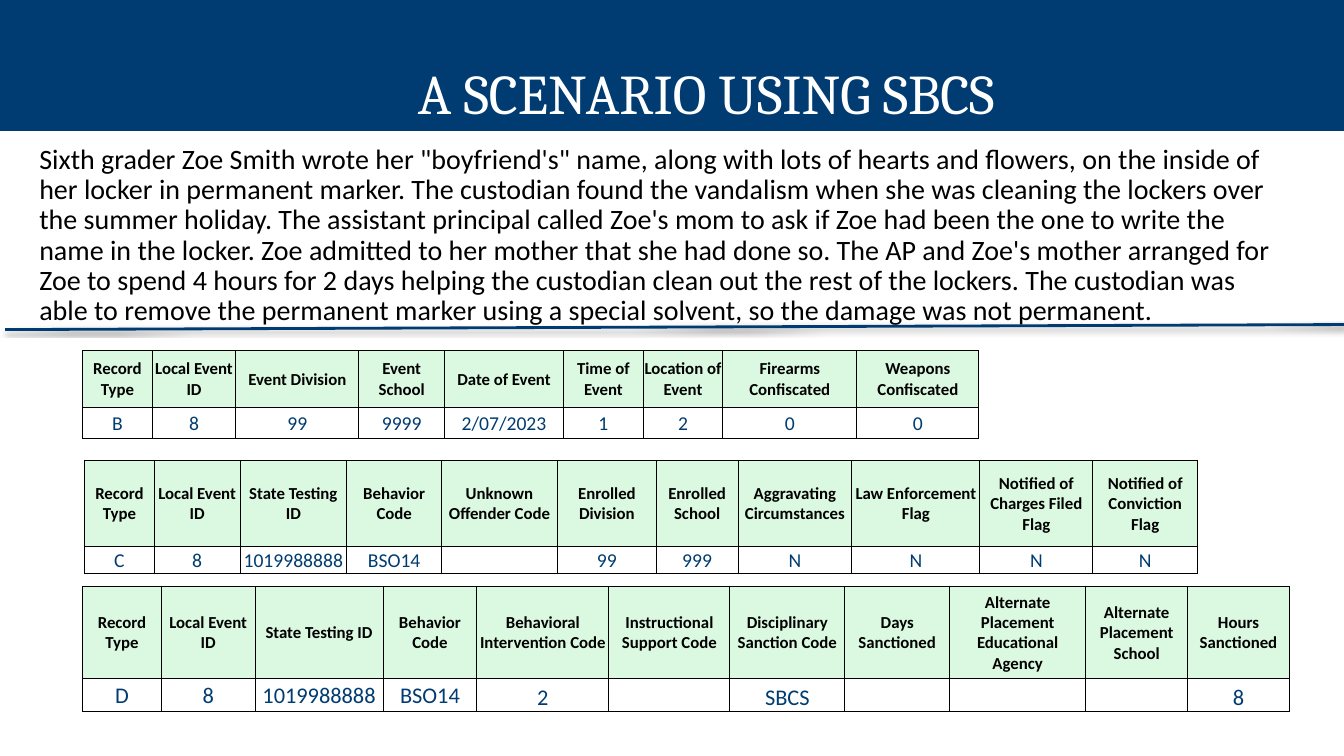
from lxml import etree
from pptx import Presentation
from pptx.dml.color import RGBColor
from pptx.enum import shapes, text
from pptx.oxml import parse_xml
from pptx.oxml.ns import nsdecls, qn
from pptx.util import Inches, Pt

COLORS = {"navy": "003C71", "mint": "DAF9E0", "black": "000000", "white": "FFFFFF"}
MIDDLE, BOTTOM = text.MSO_ANCHOR.MIDDLE, text.MSO_ANCHOR.BOTTOM
MARGINS = ("margin_left", "margin_top", "margin_right", "margin_bottom")

SCENARIO = (
    "Sixth grader Zoe Smith wrote her \"boyfriend's\" name, along with lots of hearts and "
    "flowers, on the inside of her locker in permanent marker. The custodian found the "
    "vandalism when she was cleaning the lockers over the summer holiday. The assistant "
    "principal called Zoe's mom to ask if Zoe had been the one to write the name in the "
    "locker. Zoe admitted to her mother that she had done so. The AP and Zoe's mother "
    "arranged for Zoe to spend 4 hours for 2 days helping the custodian clean out the rest "
    "of the lockers. The custodian was able to remove the permanent marker using a special "
    "solvent, so the damage was not permanent."
)

# Each column is (heading, value, width).
EVENT = [
    ("Record Type", "B", 0.69), ("Local Event ID", "8", 0.83),
    ("Event Division", "99", 1.22), ("Event School", "9999", 0.85),
    ("Date of Event", "2/07/2023", 1.18), ("Time of Event", "1", 0.79),
    ("Location of Event", "2", 0.79), ("Firearms Confiscated", "0", 1.33),
    ("Weapons Confiscated", "0", 1.21),
]
OFFENDER = [
    ("Record Type", "C", 0.69), ("Local Event ID", "8", 0.85),
    ("State Testing ID", "1019988888", 1.06), ("Behavior Code", "BSO14", 0.94),
    ("Unknown Offender Code", "", 1.15), ("Enrolled Division", "99", 0.98),
    ("Enrolled School", "999", 0.81), ("Aggravating Circumstances", "N", 1.13),
    ("Law Enforcement Flag", "N", 1.27), ("Notified of Charges Filed Flag", "N", 1.12),
    ("Notified of Conviction Flag", "N", 1.04),
]
SANCTION = [
    ("Record Type", "D", 0.78), ("Local Event ID", "8", 0.93),
    ("State Testing ID", "1019988888", 1.27), ("Behavior Code", "BSO14", 0.93),
    ("Behavioral Intervention Code", "2", 1.31), ("Instructional Support Code", "", 1.2),
    ("Disciplinary Sanction Code", "SBCS", 1.14), ("Days Sanctioned", "", 1.04),
    ("Alternate Placement Educational Agency", "", 1.35),
    ("Alternate Placement School", "", 1.01), ("Hours Sanctioned", "8", 1.01),
]


def rgb(name):
    return RGBColor.from_string(COLORS[name])


def set_all(target, values):
    for name, value in values.items():
        setattr(target, name, value)


def set_margins(target, inches):
    set_all(target, dict(zip(MARGINS, map(Inches, inches))))


def write(p, words, color, **font):
    """Put one formatted run in the paragraph; an empty one keeps only its size."""
    if not words:
        etree.SubElement(p._p, qn("a:endParaRPr"), sz=str(font["size"].pt * 100)[:4])
        return
    r = p.add_run()
    r.text = words
    set_all(r.font, font)
    r.font.color.rgb = rgb(color)


def add_scenario(s, left, top, width, height):
    box = s.shapes.add_textbox(*map(Inches, (left, top, width, height)))
    tf = box.text_frame
    tf.word_wrap = True
    set_margins(tf, (0.13, 0.07, 0.13, 0.07))
    p = tf.paragraphs[0]
    p.line_spacing = 0.9
    write(p, SCENARIO, "black", name="Calibri", size=Pt(20))


def add_title_band(s, left, top, width, height):
    band = s.shapes.add_shape(shapes.MSO_SHAPE.RECTANGLE,
                              *map(Inches, (left, top, width, height)))
    band.shadow.inherit = False
    band.fill.solid()
    band.fill.fore_color.rgb = rgb("navy")
    band.line.fill.background()
    tf = band.text_frame
    set_all(tf, {"word_wrap": True, "vertical_anchor": MIDDLE})
    set_margins(tf, (0.9, 0.7, 0.1, 0.05))
    p = tf.paragraphs[0]
    set_all(p, {"alignment": text.PP_ALIGN.CENTER, "line_spacing": 0.8,
                "space_before": Pt(10)})
    write(p, "A SCENARIO USING SBCS ", "white", name="Cambria", size=Pt(40))


def add_divider(s, x1, y1, x2, y2):
    line = s.shapes.add_connector(shapes.MSO_CONNECTOR.STRAIGHT,
                                  *map(Inches, (x1, y1, x2, y2)))
    line.line.width = Pt(2)
    line.line.color.rgb = rgb("navy")
    line._element.spPr.append(parse_xml(
        f'<a:effectLst {nsdecls("a")}>'
        f'<a:outerShdw blurRad="{Pt(3.1)}" dist="{Pt(1.6)}" dir="5400000" rotWithShape="0">'
        f'<a:srgbClr val="{COLORS["black"]}"><a:alpha val="38000"/></a:srgbClr>'
        '</a:outerShdw></a:effectLst>'))


def add_borders(cell):
    tcPr = cell._tc.get_or_add_tcPr()
    for side in ("lnL", "lnR", "lnT", "lnB"):
        tcPr.append(parse_xml(
            f'<a:{side} {nsdecls("a")} w="{Pt(0.75)}"><a:solidFill>'
            f'<a:srgbClr val="{COLORS["black"]}"/></a:solidFill></a:{side}>'))


def fill_cell(cell, words, color, anchor, **font):
    add_borders(cell)
    set_margins(cell, (0.01, 0.01, 0.01, 0))
    cell.vertical_anchor = anchor
    p = cell.text_frame.paragraphs[0]
    p.alignment = text.PP_ALIGN.CENTER
    write(p, words, color, name="Calibri", **font)


def add_record(s, left, top, row_heights, columns, value_size, bottom_from=None):
    """Draw one record; values from column bottom_from on sit at the cell bottom."""
    width = sum(column[2] for column in columns)
    frame = s.shapes.add_table(2, len(columns), *map(
        Inches, (left, top, width, sum(row_heights))))
    table = frame.table
    set_all(table, {"first_row": False, "horz_banding": False})
    for row, height in zip(table.rows, row_heights):
        row.height = Inches(height)
    for i, (heading, value, column_width) in enumerate(columns):
        table.columns[i].width = Inches(column_width)
        head, data = table.cell(0, i), table.cell(1, i)
        fill_cell(head, heading, "black", MIDDLE, size=Pt(12), bold=True)
        head.fill.solid()
        head.fill.fore_color.rgb = rgb("mint")
        low = bottom_from is not None and i >= bottom_from
        fill_cell(data, value, "navy", BOTTOM if low else MIDDLE,
                  size=Pt(value_size), bold=False)
        data.fill.background()


def main():
    prs = Presentation()
    set_all(prs, {"slide_width": Inches(13.33), "slide_height": Inches(7.5)})
    s = prs.slides.add_slide(prs.slide_layouts[6])
    add_scenario(s, 0.26, 1.37, 12.63, 5.16)
    add_title_band(s, 0, 0, 13.33, 1.3)
    add_divider(s, 0.05, 3.27, 13.33, 3.22)
    add_record(s, 0.82, 3.48, (0.56, 0.31), EVENT, 14)
    add_record(s, 0.84, 4.57, (0.85, 0.27), OFFENDER, 14)
    add_record(s, 0.82, 5.82, (0.91, 0.33), SANCTION, 16, bottom_from=4)
    prs.save("out.pptx")


if __name__ == "__main__":
    main()
